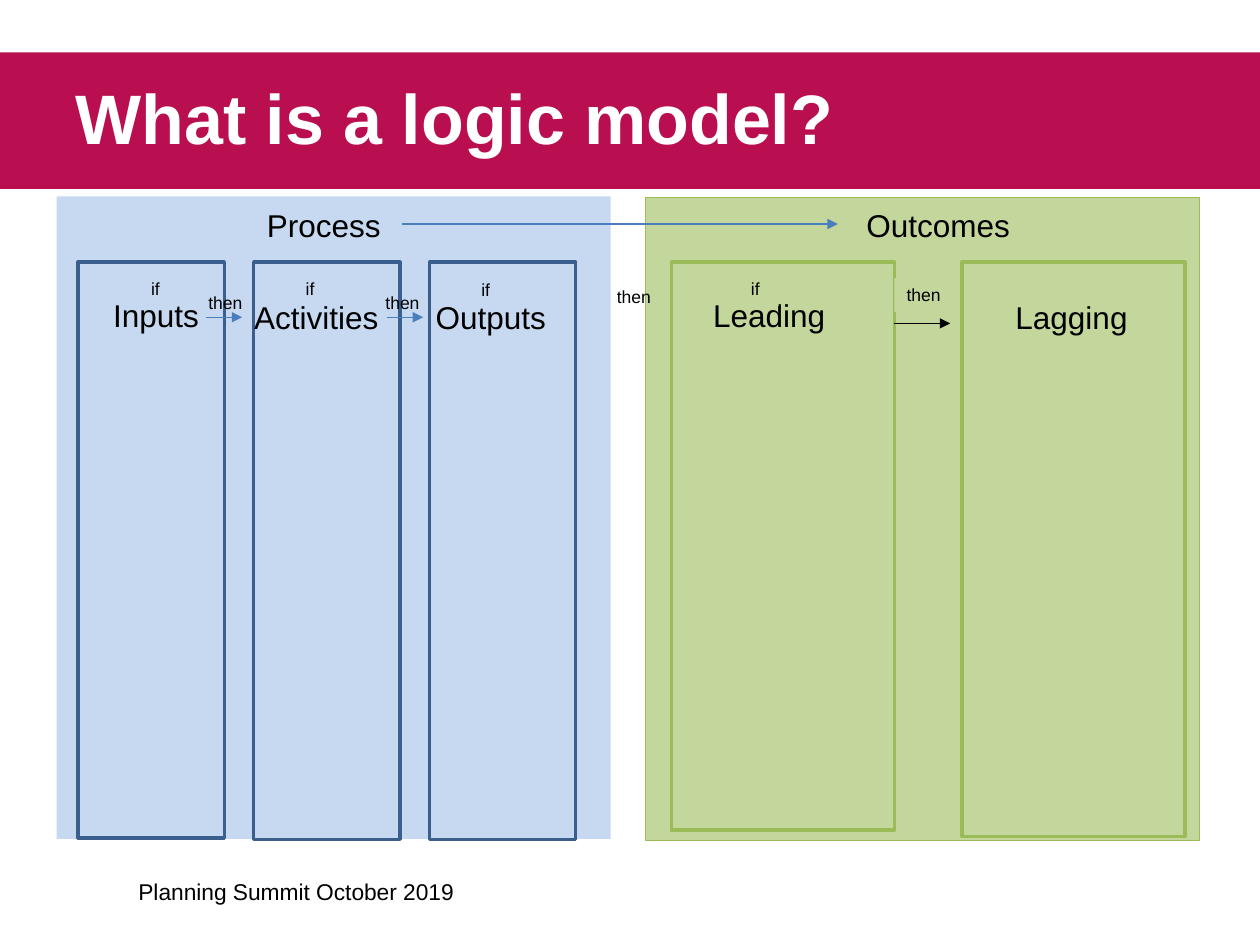
from dataclasses import dataclass

from lxml.etree import SubElement
from pptx import Presentation
from pptx.dml.color import RGBColor
from pptx.enum.shapes import MSO_CONNECTOR, MSO_SHAPE
from pptx.enum.text import MSO_ANCHOR, PP_ALIGN
from pptx.oxml.ns import qn
from pptx.util import Pt


@dataclass(frozen=True)
class Theme:
    font: str = "Arial"
    title_size: float = 40
    heading_size: float = 18
    footer_size: float = 13
    link_size: float = 10
    text: str = "000000"
    title_text: str = "FFFFFF"
    band: str = "B90E4F"
    process_fill: str = "C6D9F1"
    process_line: str = "3A5F8C"
    process_arrow: str = "4B7EBC"
    outcome_fill: str = "C3D69B"
    outcome_line: str = "9BBB59"


THEME = Theme()


def colour(value):
    return RGBColor.from_string(value)


def write(frame, text, size=THEME.heading_size, color=THEME.text, bold=False,
          anchor=MSO_ANCHOR.TOP):
    frame.word_wrap = True
    frame.vertical_anchor = anchor
    paragraph = frame.paragraphs[0]
    paragraph.alignment = PP_ALIGN.LEFT
    run = paragraph.add_run()
    run.text = text
    run.font.name = THEME.font
    run.font.size = Pt(size)
    run.font.bold = bold
    run.font.color.rgb = colour(color)


def add_box(slide, left, top, width, height, fill=None, line=None, weight=2):
    box = slide.shapes.add_shape(
        MSO_SHAPE.RECTANGLE, Pt(left), Pt(top), Pt(width), Pt(height))
    box.shadow.inherit = False
    if fill:
        box.fill.solid()
        box.fill.fore_color.rgb = colour(fill)
    else:
        box.fill.background()
    if line:
        box.line.color.rgb = colour(line)
        box.line.width = Pt(weight)
    else:
        box.line.fill.background()
    return box


def add_label(slide, text, left, top, width, height=29, fill=None, **style):
    if fill:
        label = add_box(slide, left, top, width, height, fill)
    else:
        label = slide.shapes.add_textbox(Pt(left), Pt(top), Pt(width), Pt(height))
    write(label.text_frame, text, **style)


def add_link_word(slide, word, left, top, fill=None):
    width = {"if": 23, "then": 34.5}[word]
    add_label(slide, word, left, top, width, 19.4, fill, size=THEME.link_size)


def add_arrow(slide, start, end, y, color=THEME.process_arrow):
    arrow = slide.shapes.add_connector(
        MSO_CONNECTOR.STRAIGHT, Pt(start), Pt(y), Pt(end), Pt(y))
    arrow.line.color.rgb = colour(color)
    arrow.line.width = Pt(0.75)
    SubElement(arrow.line._get_or_add_ln(), qn("a:tailEnd"), type="triangle")
    SubElement(arrow.element.spPr, qn("a:effectLst"))


def add_title(slide, text):
    band = add_box(slide, 0, 30, 720, 78, THEME.band)
    title = slide.shapes.title
    title.left, title.top, title.width, title.height = Pt(36), Pt(21.6), Pt(648), Pt(90)
    write(title.text_frame, text, size=THEME.title_size, color=THEME.title_text,
          bold=True, anchor=MSO_ANCHOR.MIDDLE)
    title.element.addprevious(band.element)


def add_process(slide):
    add_box(slide, 32.4, 112.2, 316.6, 367.2, THEME.process_fill)
    for index, height in enumerate((329, 329.8, 329.8)):
        add_box(slide, 44.6 + 100.4 * index, 149.8, 83.6, height,
                line=THEME.process_line)
    add_label(slide, "Process", 145.4, 114, 84.5)
    steps = (("Inputs", 57.6, 165.8, 79.2, 155.6),
             ("Activities", 138.2, 167, 167.6, 155.6),
             ("Outputs", 241.9, 167, 268, 156.2))
    for step, left, top, if_left, if_top in steps:
        add_label(slide, step, left, top, 88)
        add_link_word(slide, "if", if_left, if_top)
    for start in (117.6, 221):
        add_arrow(slide, start, start + 20.8, 181.3)
    for left in (112, 213.2):
        add_link_word(slide, "then", left, 163.6)


def add_outcomes(slide):
    fill = THEME.outcome_fill
    add_box(slide, 368.8, 113, 316.6, 367.2, fill, THEME.outcome_line, 0.75)
    for left, height in ((383.6, 324.6), (549.6, 328.2)):
        add_box(slide, left, 149.8, 127.6, height, line=THEME.outcome_line)
    add_label(slide, "Outcomes", 488, 114, 96.5, fill=fill)
    add_label(slide, "Leading", 400.4, 165.8, 88, fill=fill)
    add_label(slide, "Lagging", 573.2, 167, 88, fill=fill)
    add_arrow(slide, 511, 543, 184.8, THEME.text)
    add_link_word(slide, "if", 422, 155.6, fill)
    add_link_word(slide, "then", 511, 159, fill)


def main():
    deck = Presentation()
    deck.slide_width, deck.slide_height = Pt(720), Pt(540)
    slide = deck.slides.add_slide(deck.slide_layouts[5])
    add_title(slide, "What is a logic model?")
    add_label(slide, "Planning Summit October 2019", 72, 498.2, 396,
              size=THEME.footer_size)
    add_process(slide)
    add_outcomes(slide)
    add_arrow(slide, 229.6, 478.8, 128)
    add_link_word(slide, "then", 345.4, 160)
    deck.save("out.pptx")


if __name__ == "__main__":
    main()
